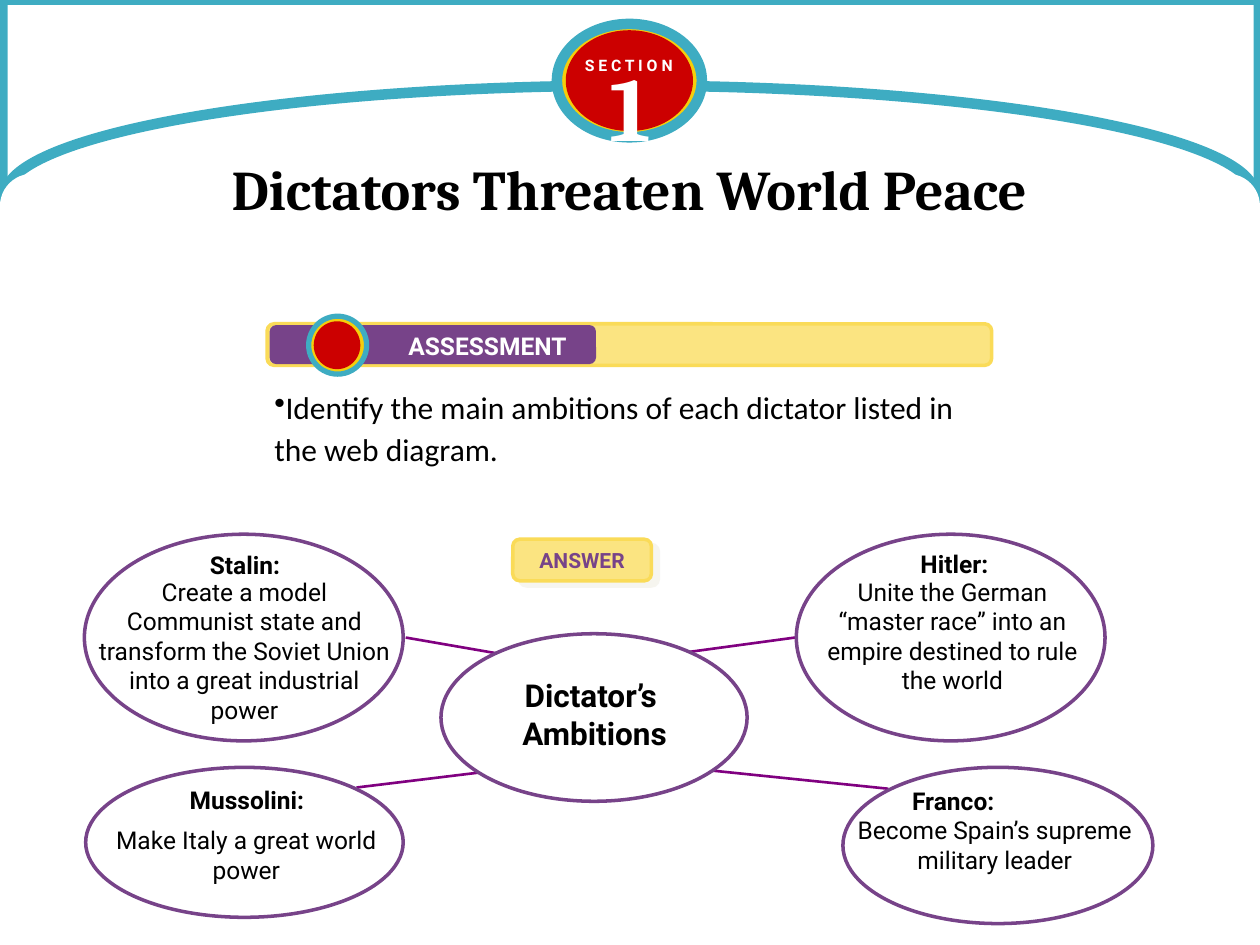
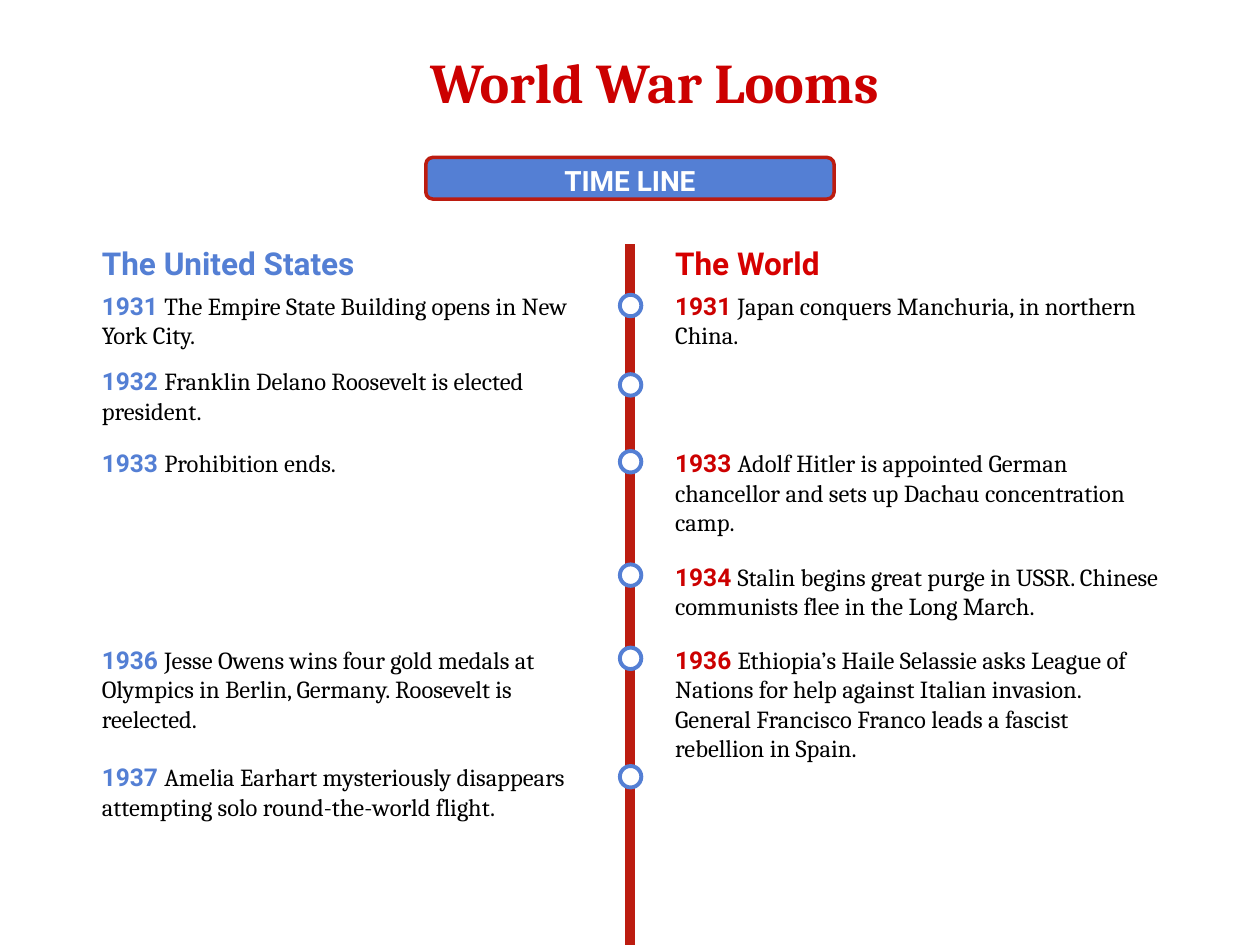
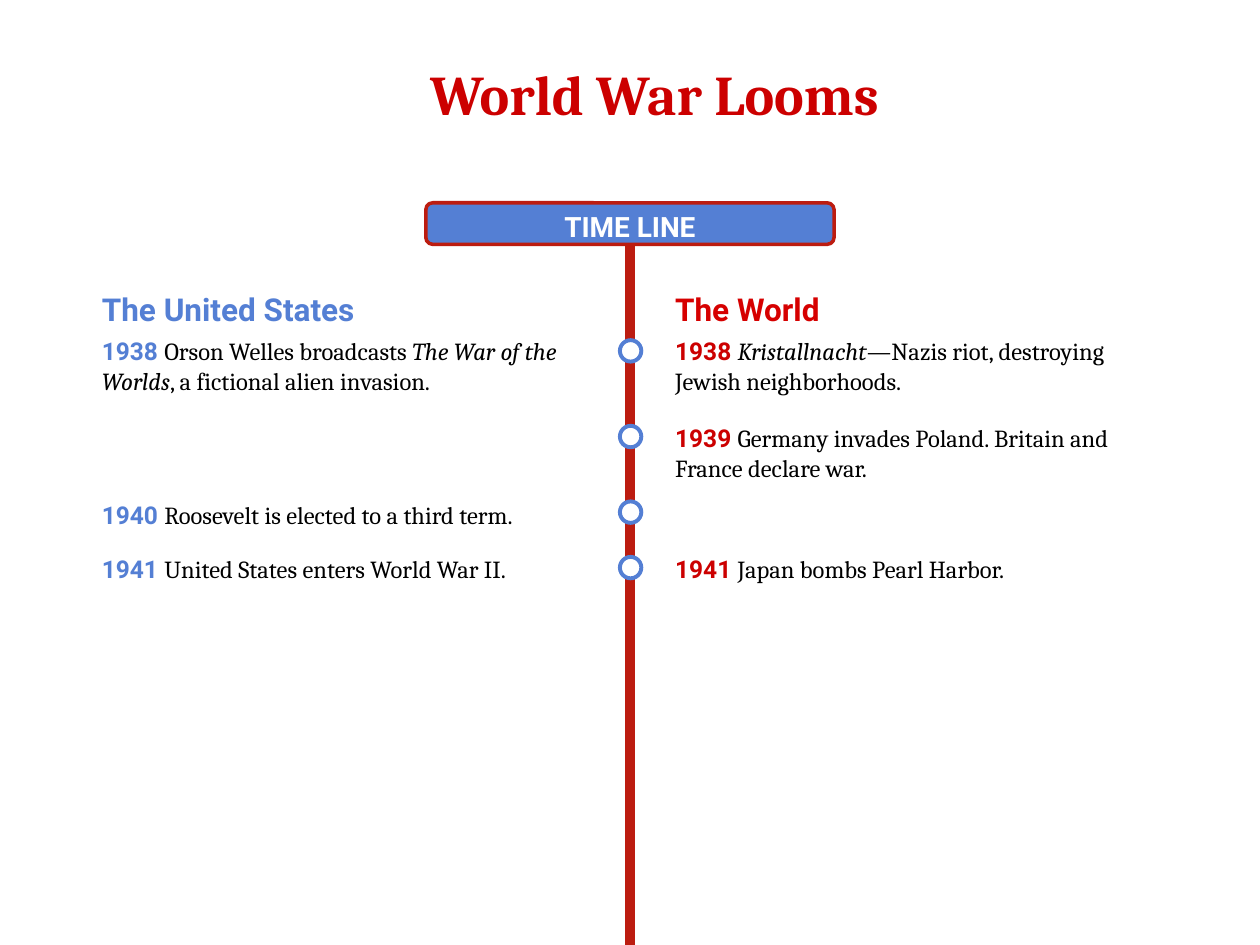
from lxml import etree
from pptx import Presentation
from pptx import util as u
from pptx.dml.color import RGBColor
from pptx.enum import shapes, text
from pptx.oxml.ns import qn

COLORS = {
    "white": "FFFFFF", "black": "000000", "teal": "3EACC2", "gold": "F5CE0B",
    "red": "CC0000", "heading red": "D60000", "line red": "BC1C10",
    "blue": "547FD4", "purple": "774389", "spoke": "800080",
    "cream": "FBE481", "cream edge": "FADB58", "shadow": "EEECE1",
}
# font, size, colour, bold, italic
STYLES = {
    "section": ("Roboto", 9, "white", True, False),
    "number": ("Cambria", 52, "white", True, False),
    "black title": ("Cambria", 32, "black", True, False),
    "red title": ("Cambria", 32, "red", True, False),
    "task": ("Calibri", 18, "black", False, False),
    "answer": ("Roboto", 12, "purple", True, False),
    "assessment": ("Roboto", 14, "white", True, False),
    "hub": ("Roboto", 18, "black", True, False),
    "name": ("Roboto", 14, "black", True, False),
    "ambition": ("Roboto", 14, "black", False, False),
    "banner": ("Roboto", 16, "white", True, False),
    "us heading": ("Roboto", 18, "blue", True, False),
    "world heading": ("Roboto", 18, "heading red", True, False),
    "us year": ("Roboto", 14, "blue", True, False),
    "world year": ("Roboto", 14, "red", True, False),
    "event": ("Cambria", 14, "black", False, False),
    "event italic": ("Cambria", 14, "black", False, True),
}
RECT = shapes.MSO_SHAPE.RECTANGLE
ROUND = shapes.MSO_SHAPE.ROUNDED_RECTANGLE
OVAL = shapes.MSO_SHAPE.OVAL
STRAIGHT = shapes.MSO_CONNECTOR.STRAIGHT
LEFT, CENTER = text.PP_ALIGN.LEFT, text.PP_ALIGN.CENTER
TOP, MIDDLE = text.MSO_ANCHOR.TOP, text.MSO_ANCHOR.MIDDLE


def draw(s, kind, box, fill=None, line=None, width=1):
    sp = s.shapes.add_shape(kind, *map(u.Inches, box))
    sp.shadow.inherit = False
    if fill:
        sp.fill.solid()
        sp.fill.fore_color.rgb = RGBColor.from_string(COLORS[fill])
    else:
        sp.fill.background()
    if line:
        sp.line.color.rgb = RGBColor.from_string(COLORS[line])
        sp.line.width = u.Pt(width)
    else:
        sp.line.fill.background()
    return sp


def write(sp, words, style, align=CENTER, anchor=TOP, wrap=True, extra=()):
    """Fill one paragraph; extra holds further (words, style) runs."""
    tf = sp.text_frame
    tf.word_wrap = wrap
    tf.auto_size = text.MSO_AUTO_SIZE.NONE
    tf.vertical_anchor = anchor
    p = tf.paragraphs[0]
    p.text = words
    p.alignment = align
    styled = [(r, style) for r in p.runs]
    for more, more_style in extra:
        r = p.add_run()
        r.text = more
        styled.append((r, more_style))
    for r, key in styled:
        font, size, color, bold, italic = STYLES[key]
        r.font.name, r.font.size = font, u.Pt(size)
        r.font.bold, r.font.italic = bold, italic
        r.font.color.rgb = RGBColor.from_string(COLORS[color])
    return p


prs = Presentation()
prs.slide_width, prs.slide_height = u.Inches(10), u.Inches(7.5)
title_only = prs.slide_layouts[5]

# Slide 1: arched header with section badge
s = prs.slides.add_slide(title_only)
draw(s, RECT, (0, 0, 10, 1.92), "teal")
draw(s, RECT, (0.06, 0.04, 9.89, 1.63), "white")
draw(s, OVAL, (0.04, 0.68, 9.92, 1.74), None, "teal", 6)
draw(s, OVAL, (4.42, 0.19, 1.15, 0.9), "gold", "teal", 6)
draw(s, OVAL, (4.49, 0.24, 1.01, 0.8), "red")
draw(s, ROUND, (0, 1.38, 10, 1.53), "white")
for box, words, style in [
    ((4.62, 0.39, 0.74, 0.3), "S E C T I O N", "section"),
    ((4.38, 0.35, 1.24, 0.97), "1", "number"),
]:
    write(s.shapes.add_textbox(*map(u.Inches, box)), words, style, wrap=style == "number")

title = s.shapes.title
title.left, title.top, title.width, title.height = map(u.Inches, (1.32, 1.18, 7.35, 0.63))
write(title, "Dictators Threaten World Peace", "black title")
s.shapes.element.append(title.element)  # in front of the header shapes

# Task, answer button and assessment bar
task = s.shapes.add_textbox(*map(u.Inches, (2.08, 3, 5.97, 0.77)))
p = write(task, "Identify the main ambitions of each dictator listed in the web diagram.",
          "task", LEFT)
p.line_spacing = u.Pt(24)
pPr = p._p.get_or_add_pPr()
pPr.set("marL", "0")
pPr.set("indent", "0")
etree.SubElement(pPr, qn("a:buChar"), char="•")

answer = draw(s, ROUND, (4.07, 4.28, 1.1, 0.33), "cream", "cream edge", 2)
write(answer, "ANSWER", "answer", anchor=MIDDLE, wrap=False)
effects = answer.element.spPr.find(qn("a:effectLst"))
shadow = etree.SubElement(effects, qn("a:outerShdw"), blurRad="0", dist=str(u.Pt(5)),
                          dir=str(37 * 60000), algn="ctr", rotWithShape="0")
tint = etree.SubElement(shadow, qn("a:srgbClr"), val=COLORS["shadow"])
etree.SubElement(tint, qn("a:alpha"), val="50000")

draw(s, ROUND, (2.12, 2.57, 5.75, 0.33), "cream", "cream edge", 2)
draw(s, ROUND, (2.14, 2.58, 2.59, 0.31), "purple")
draw(s, OVAL, (2.45, 2.51, 0.46, 0.46), "gold", "teal", 3)
draw(s, OVAL, (2.49, 2.55, 0.37, 0.38), "red")
label = s.shapes.add_textbox(*map(u.Inches, (3.1, 2.58, 1.54, 0.33)))
write(label, "ASSESSMENT", "assessment", anchor=MIDDLE, wrap=False)

# Web diagram
for ends in [
    (4.72, 5.32, 3.22, 5.06),
    (4.72, 6.02, 2.83, 6.25),
    (4.72, 6.02, 7.05, 6.26),
    (4.54, 5.3, 6.31, 5.06),
]:
    spoke = s.shapes.add_connector(STRAIGHT, *map(u.Inches, ends))
    spoke.line.color.rgb = RGBColor.from_string(COLORS["spoke"])
    spoke.line.width = u.Pt(1.5)
    etree.SubElement(spoke.element.spPr, qn("a:effectLst"))

draw(s, OVAL, (3.5, 5.03, 2.43, 1.33), "white", "purple", 2)
hub = s.shapes.add_textbox(*map(u.Inches, (3.26, 5.32, 2.92, 0.7)))
write(hub, "Dictator’s \vAmbitions", "hub")

# bubble, name box, name, ambition box, ambition
dictators = [
    ((0.67, 4.24, 2.53, 1.64), (1.03, 4.32, 1.83, 0.33), "Stalin:",
     (0.68, 4.53, 2.52, 1.26),
     "Create a model Communist state and transform the Soviet Union into a great industrial power"),
    ((6.32, 4.24, 2.45, 1.64), (6.83, 4.31, 1.49, 0.33), "Hitler:",
     (6.45, 4.53, 2.22, 1.03),
     "Unite the German “master race” into an empire destined to rule the world"),
    ((6.69, 6.09, 2.46, 1.24), (6.62, 6.19, 1.89, 0.33), "Franco:",
     (6.67, 6.42, 2.45, 0.57), "Become Spain’s supreme military leader"),
    ((0.68, 6.09, 2.52, 1.19), (1.19, 6.18, 1.54, 0.33), "Mussolini:",
     (0.72, 6.5, 2.47, 0.57), "Make Italy a great world power"),
]
for bubble, name_box, name, ambition_box, ambition in dictators:
    draw(s, OVAL, bubble, "white", "purple", 2)
    write(s.shapes.add_textbox(*map(u.Inches, name_box)), name, "name")
    write(s.shapes.add_textbox(*map(u.Inches, ambition_box)), ambition, "ambition")

# Slides 2 and 3: time lines
# title top, banner top, headings top, events: (year, text top, dot top, US, world)
timelines = [
    (0.33, 1.25, 1.89, [
        ("1931", 2.26, 2.34,
         [("The Empire State Building opens in New York City.", "event")],
         [("Japan conquers Manchuria, in northern China.", "event")]),
        ("1932", 2.86, 2.97,
         [("Franklin Delano Roosevelt is elected president.", "event")], []),
        ("1933", 3.51, 3.58,
         [("Prohibition ends.", "event")],
         [("Adolf Hitler is appointed German chancellor and sets up Dachau "
           "concentration camp.", "event")]),
        ("1934", 4.41, 4.48, [],
         [("Stalin begins great purge in USSR. Chinese communists flee in the "
           "Long March.", "event")]),
        ("1936", 5.07, 5.14,
         [("Jesse Owens wins four gold medals at Olympics in Berlin, Germany. "
           "Roosevelt is reelected.", "event")],
         [("Ethiopia’s Haile Selassie asks League of Nations for help against Italian "
           "invasion. General Francisco Franco leads a fascist rebellion in Spain.",
           "event")]),
        ("1937", 6, 6.08,
         [("Amelia Earhart mysteriously disappears attempting solo round-the-world "
           "flight.", "event")], []),
    ]),
    (0.42, 1.61, 2.25, [
        ("1938", 2.62, 2.7,
         [("Orson Welles broadcasts ", "event"), ("The War of the Worlds", "event italic"),
          (", a fictional alien invasion.", "event")],
         [("Kristallnacht", "event italic"),
          ("—Nazis riot, destroying Jewish neighborhoods.", "event")]),
        ("1939", 3.31, 3.38, [],
         [("Germany invades Poland. Britain and France declare war.", "event")]),
        ("1940", 3.92, 3.98,
         [("Roosevelt is elected to a third term.", "event")], []),
        ("1941", 4.35, 4.42,
         [("United States enters World War II.", "event")],
         [("Japan bombs Pearl Harbor.", "event")]),
    ]),
]
AXIS_TOP, BANNER_HEIGHT = 1.94, 0.33
US_LEFT, WORLD_LEFT, COLUMN_WIDTH = 0.71, 5.26, 4.07

for title_top, banner_top, heading_top, events in timelines:
    s = prs.slides.add_slide(title_only)
    title = s.shapes.title
    title.left, title.top, title.width, title.height = map(
        u.Inches, (1.75, title_top, 6.89, 0.63))
    write(title, "World War Looms", "red title")

    banner = draw(s, ROUND, (3.38, banner_top, 3.24, BANNER_HEIGHT), "blue", "line red", 2)
    write(banner, "TIME LINE", "banner", anchor=MIDDLE, wrap=False)
    banner.text_frame.margin_top, banner.text_frame.margin_bottom = u.Inches(0.04), 0

    axis = s.shapes.add_connector(STRAIGHT, *map(u.Inches, (5, AXIS_TOP, 5, 7.5)))
    axis.line.color.rgb = RGBColor.from_string(COLORS["line red"])
    axis.line.width = u.Pt(6)
    etree.SubElement(axis.element.spPr, qn("a:effectLst"))
    if round(banner_top + BANNER_HEIGHT, 2) == AXIS_TOP:
        axis.begin_connect(banner, 2)

    for left, width, words, style in [
        (US_LEFT, 2.92, "The United States", "us heading"),
        (WORLD_LEFT, 1.94, "The World", "world heading"),
    ]:
        heading = s.shapes.add_textbox(*map(u.Inches, (left, heading_top, width, 0.4)))
        write(heading, words, style, LEFT)

    for year, text_top, dot_top, us, world in events:
        draw(s, OVAL, (4.92, dot_top, 0.17, 0.17), "white", "blue", 2.25)
        for left, style, parts in [(US_LEFT, "us year", us), (WORLD_LEFT, "world year", world)]:
            if parts:
                event = s.shapes.add_textbox(
                    *map(u.Inches, (left, text_top, COLUMN_WIDTH, 0.5)))
                write(event, year + " ", style, LEFT, extra=parts)

prs.save("out.pptx")
